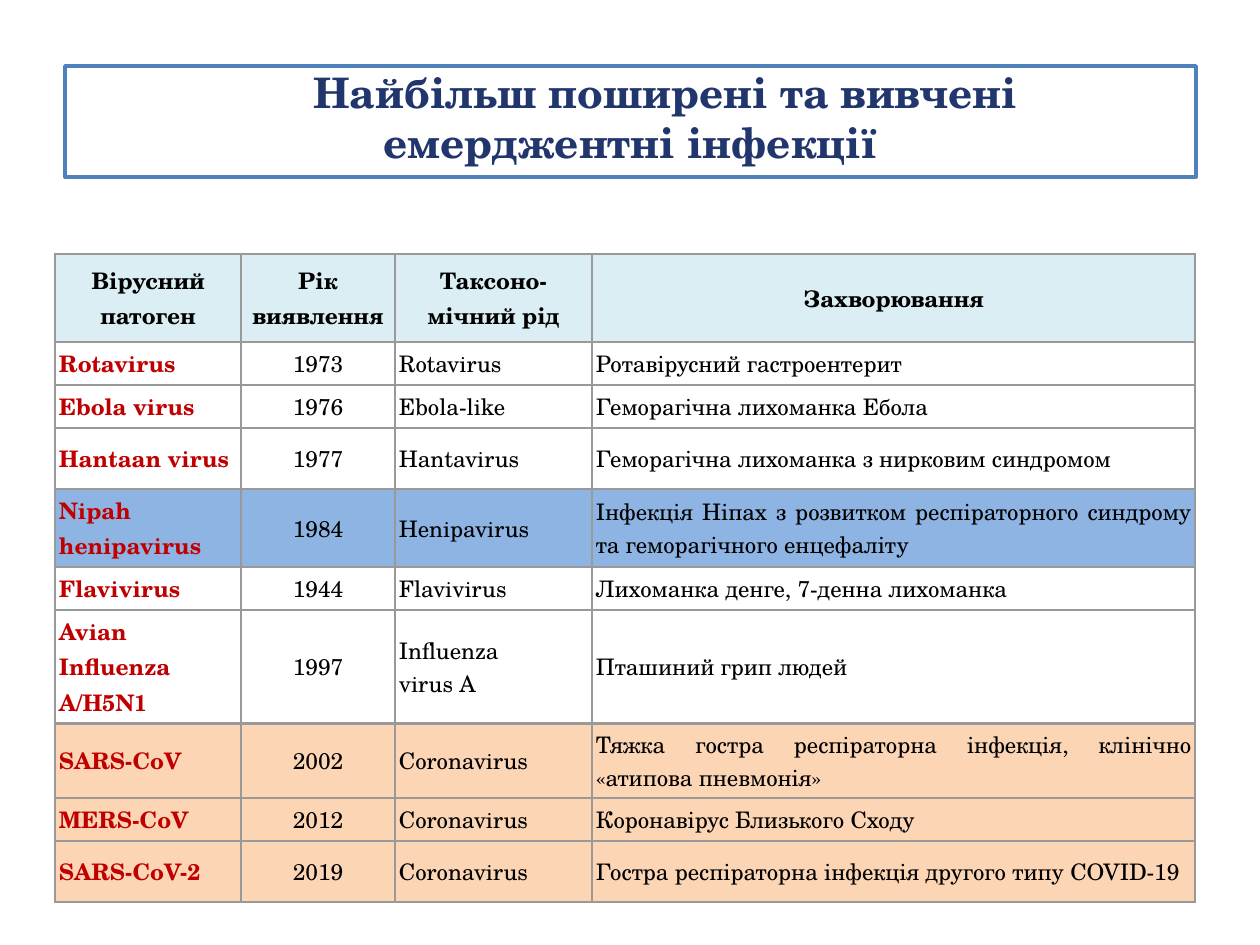
from lxml import etree
from pptx import Presentation
from pptx.dml.color import RGBColor
from pptx.enum.text import MSO_ANCHOR, MSO_AUTO_SIZE, PP_ALIGN
from pptx.oxml.ns import qn
from pptx.util import Pt

LEFT, CENTER, JUSTIFY = PP_ALIGN.LEFT, PP_ALIGN.CENTER, PP_ALIGN.JUSTIFY
MIDDLE = MSO_ANCHOR.MIDDLE
FONT = "TeX Gyre Schola"
BLACK = RGBColor(0x00, 0x00, 0x00)
WHITE = RGBColor(0xFF, 0xFF, 0xFF)
RED = RGBColor(0xC0, 0x00, 0x00)
NAVY = RGBColor(0x21, 0x36, 0x6D)
BLUE = RGBColor(0x4F, 0x81, 0xBD)
GREY = RGBColor(0x99, 0x99, 0x99)
HEADER_FILL = RGBColor(0xDB, 0xEE, 0xF4)
NIPAH_FILL = RGBColor(0x8E, 0xB4, 0xE3)
CORONA_FILL = RGBColor(0xFC, 0xD5, 0xB5)

TITLE = ["Найбільш поширені та вивчені", "емерджентні інфекції"]
TITLE_INDENTS = [70, 0]
HEADER = ["Вірусний патоген", "Рік виявлення", "Таксоно-мічний рід", "Захворювання"]
ROWS = [
    (43, None, ["Rotavirus", "1973", "Rotavirus", "Ротавірусний гастроентерит"]),
    (42, None, ["Ebola virus", "1976", "Ebola-like", "Геморагічна лихоманка Ебола"]),
    (61, None, ["Hantaan virus", "1977", "Hantavirus",
                "Геморагічна лихоманка з нирковим синдромом"]),
    (78, NIPAH_FILL, ["Nipah henipavirus", "1984", "Henipavirus",
                      "Інфекція Ніпах з розвитком респіраторного синдрому "
                      "та геморагічного енцефаліту"]),
    (42, None, ["Flavivirus", "1944", "Flavivirus", "Лихоманка денге, 7-денна лихоманка"]),
    (113, None, ["Avian Influenza A/H5N1", "1997", "Influenza\nvirus A", "Пташиний грип людей"]),
    (74, CORONA_FILL, ["SARS-CoV", "2002", "Coronavirus",
                       "Тяжка гостра респіраторна інфекція, клінічно «атипова пневмонія»"]),
    (43, CORONA_FILL, ["MERS-CoV", "2012", "Coronavirus", "Коронавірус Близького Сходу"]),
    (61, CORONA_FILL, ["SARS-CoV-2", "2019", "Coronavirus",
                       "Гостра респіраторна інфекція другого типу COVID-19"]),
]
HEADER_HEIGHT = 88
COLUMN_WIDTHS = [186, 154, 197, 603]
COLUMN_FORMATS = [
    dict(align=LEFT, color=RED, bold=True),
    dict(align=CENTER),
    dict(align=LEFT),
    dict(align=JUSTIFY),
]
HEADER_FORMAT = dict(align=CENTER, bold=True)


def px(value):
    return round(value * 914400 / 126)


def write(frame, text, size=13, color=BLACK, bold=False, align=LEFT):
    frame.text = text
    for para in frame.paragraphs:
        para.alignment = align
        para.line_spacing = 1.0
        for span in para.runs:
            font = span.font
            font.name, font.size, font.bold = FONT, Pt(size), bold
            font.color.rgb = color


def add_borders(cell):
    properties = cell._tc.get_or_add_tcPr()
    for side in ("lnL", "lnR", "lnT", "lnB"):
        line = etree.SubElement(properties, qn(f"a:{side}"), w=str(Pt(1.5)))
        fill = etree.SubElement(line, qn("a:solidFill"))
        etree.SubElement(fill, qn("a:srgbClr"), val=str(GREY))


def add_title(page):
    box = page.shapes.title
    box.left, box.top, box.width, box.height = map(px, (65, 66, 1131, 111))
    box.fill.solid()
    box.fill.fore_color.rgb = WHITE
    box.line.color.rgb = BLUE
    box.line.width = Pt(2)
    frame = box.text_frame
    frame.auto_size = MSO_AUTO_SIZE.NONE
    frame.word_wrap = True
    frame.vertical_anchor = MIDDLE
    frame.margin_left = frame.margin_right = frame.margin_top = 0
    frame.margin_bottom = px(9)
    write(frame, "\n".join(TITLE), size=24, color=NAVY, bold=True, align=CENTER)
    for para, indent in zip(frame.paragraphs, TITLE_INDENTS):
        properties = para._p.get_or_add_pPr()
        properties.set("marL", str(px(indent)))
        properties.set("indent", "0")


def add_pathogen_table(page):
    rows = [(HEADER_HEIGHT, HEADER_FILL, HEADER)] + ROWS
    height = sum(row[0] for row in rows)
    table = page.shapes.add_table(len(rows), len(COLUMN_WIDTHS), px(55), px(254),
                                  px(sum(COLUMN_WIDTHS)), px(height)).table
    table.horz_banding = False
    for column, width in zip(table.columns, COLUMN_WIDTHS):
        column.width = px(width)
    for row_index, (row_height, fill, texts) in enumerate(rows):
        table.rows[row_index].height = px(row_height)
        for column_index, text in enumerate(texts):
            cell = table.cell(row_index, column_index)
            cell.vertical_anchor = MIDDLE
            cell.margin_left = cell.margin_right = px(4)
            cell.margin_top = cell.margin_bottom = px(4)
            add_borders(cell)
            if fill is None:
                cell.fill.background()
            else:
                cell.fill.solid()
                cell.fill.fore_color.rgb = fill
            text_format = COLUMN_FORMATS[column_index] if row_index else HEADER_FORMAT
            write(cell.text_frame, text, **text_format)


def main():
    deck = Presentation()
    deck.slide_width, deck.slide_height = px(1260), px(945)
    page = deck.slides.add_slide(deck.slide_layouts[5])
    add_title(page)
    add_pathogen_table(page)
    deck.save("out.pptx")


if __name__ == "__main__":
    main()
